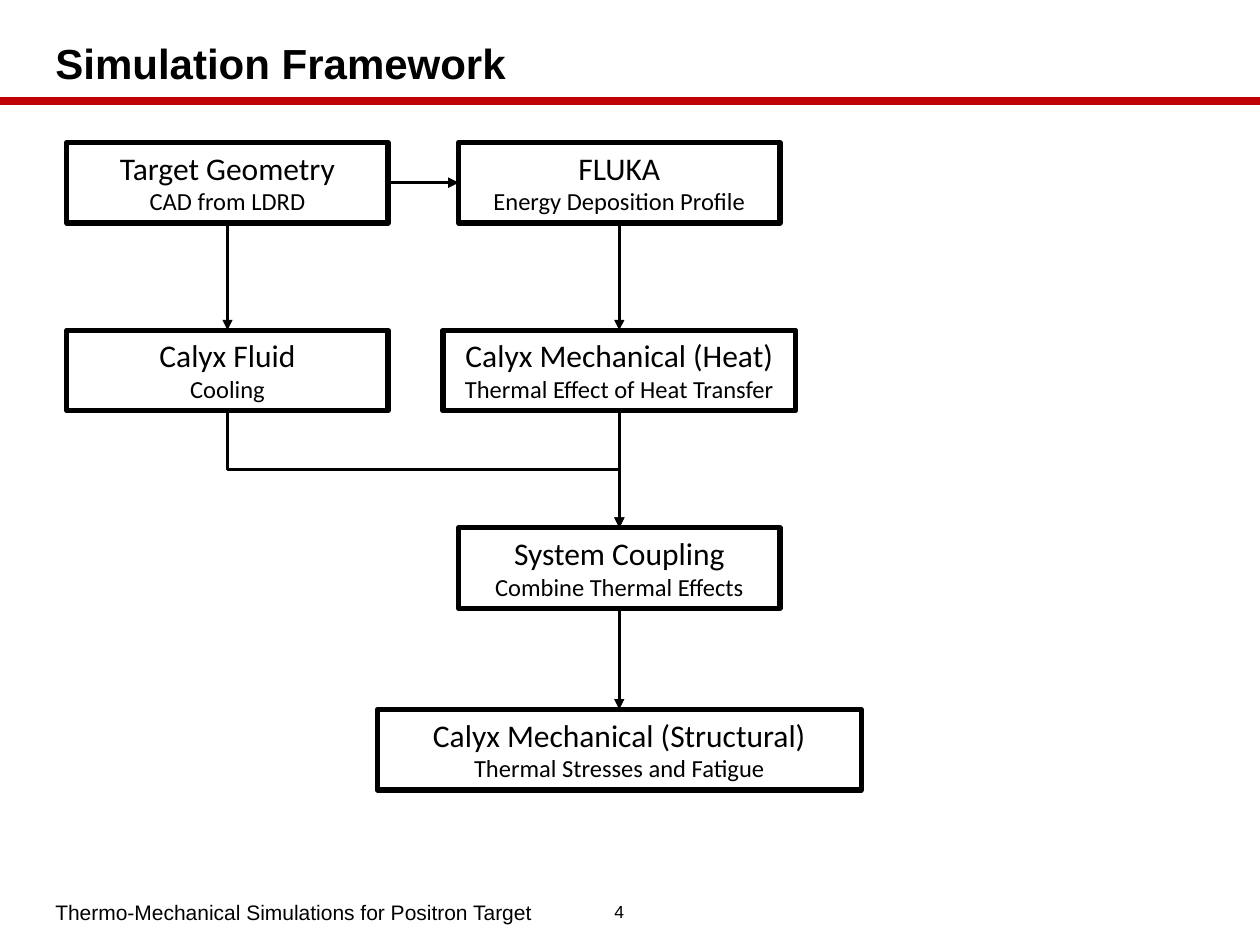
from lxml.etree import SubElement
from pptx import Presentation
from pptx.dml.color import RGBColor
from pptx.enum.shapes import MSO_CONNECTOR as Connector, MSO_SHAPE as Shape
from pptx.enum.text import MSO_ANCHOR as Anchor, MSO_AUTO_SIZE as AutoSize, PP_ALIGN as Align
from pptx.oxml.ns import qn
from pptx.util import Pt

COLORS = {"text": "000000", "rule": "C00000"}
BOX_HEIGHT = 46
TOP, LEFT, BOTTOM, RIGHT = range(4)  # connection sites of a rectangle

# key: (column, row, width, heading, detail)
STEPS = {
    "geometry": (0, 0, 183.6, "Target Geometry", "CAD from LDRD"),
    "deposition": (1, 0, 183.6, "FLUKA", "Energy Deposition Profile"),
    "cooling": (0, 1, 183.6, "Calyx Fluid", "Cooling"),
    "heat": (1, 1, 201.6, "Calyx Mechanical (Heat)", "Thermal Effect of Heat Transfer"),
    "coupling": (1, 2, 183.6, "System Coupling", "Combine Thermal Effects"),
    "structural": (1, 3, 276.5, "Calyx Mechanical (Structural)", "Thermal Stresses and Fatigue"),
}
STRAIGHT_LINKS = [
    ("geometry", RIGHT, "deposition", LEFT),
    ("geometry", BOTTOM, "cooling", TOP),
    ("deposition", BOTTOM, "heat", TOP),
    ("heat", BOTTOM, "coupling", TOP),
    ("coupling", BOTTOM, "structural", TOP),
]
COLUMN_CENTERS = (91.8, 315.7)
ROW_TOPS = (0, 107.3, 220.2, 324)


def rgb(name):
    return RGBColor.from_string(COLORS[name])


def write(paragraph, text, size, font="Arial", bold=False, align=Align.LEFT):
    paragraph.alignment = align
    run = paragraph.add_run()
    run.text = text
    run.font.name = font
    run.font.size = Pt(size)
    run.font.bold = bold
    run.font.color.rgb = rgb("text")


def style_line(connector, color, width):
    connector.line.color.rgb = rgb(color)
    connector.line.width = Pt(width)
    SubElement(connector._element.spPr, qn("a:effectLst"))


def add_header(slide, left, top, width, height):
    title = slide.shapes.title
    title.left, title.top, title.width, title.height = map(Pt, (left, top, width, height))
    title.text_frame.vertical_anchor = Anchor.MIDDLE
    heading = title.text_frame.paragraphs[0]
    heading.line_spacing = 0.9
    write(heading, "Simulation Framework", 24, bold=True)
    rule_y = Pt(top + height + 0.8)
    rule = slide.shapes.add_connector(Connector.STRAIGHT, 0, rule_y, Pt(720), rule_y)
    style_line(rule, "rule", 4.5)


def add_footer(slide, left, top, width, height):
    number_width = 42.5
    talk_width = width - number_width
    cells = [
        (left, talk_width, "Thermo-Mechanical Simulations for Positron Target", 12, Align.LEFT),
        (left + talk_width, number_width, "4", 10, Align.CENTER),
    ]
    for x, cell_width, text, size, align in cells:
        frame = slide.shapes.add_textbox(Pt(x), Pt(top), Pt(cell_width), Pt(height)).text_frame
        frame.word_wrap = True
        frame.vertical_anchor = Anchor.MIDDLE
        write(frame.paragraphs[0], text, size, align=align)


def add_step(slide, center, top, width, heading, detail):
    step = slide.shapes.add_shape(
        Shape.RECTANGLE, Pt(center - width / 2), Pt(top), Pt(width), Pt(BOX_HEIGHT))
    step.shadow.inherit = False
    step.fill.background()
    step.line.color.rgb = rgb("text")
    step.line.width = Pt(3)
    frame = step.text_frame
    frame.word_wrap = True
    frame.auto_size = AutoSize.SHAPE_TO_FIT_TEXT
    frame.vertical_anchor = Anchor.TOP
    write(frame.paragraphs[0], heading, 18, "Calibri", align=Align.CENTER)
    write(frame.add_paragraph(), detail, 14, "Calibri", align=Align.CENTER)
    return step


def link(slide, source, source_site, target, target_site, kind=Connector.STRAIGHT):
    arrow = slide.shapes.add_connector(kind, 0, 0, 0, 0)
    arrow.begin_connect(source, source_site)
    arrow.end_connect(target, target_site)
    style_line(arrow, "text", 1.5)
    SubElement(arrow.line._get_or_add_ln(), qn("a:tailEnd"), type="triangle")
    return arrow


def turn_downward(elbow):
    """Rotate an elbow so that it leaves and arrives vertically."""
    across, down = elbow.width, elbow.height
    elbow.left += (across - down) // 2
    elbow.top += (down - across) // 2
    elbow.width, elbow.height = down, across
    xfrm = elbow._element.spPr.find(qn("a:xfrm"))
    xfrm.set("rot", str(270 * 60000))
    xfrm.set("flipH", "1")


def add_flowchart(slide, left, top):
    steps = {
        key: add_step(slide, left + COLUMN_CENTERS[column], top + ROW_TOPS[row], *content)
        for key, (column, row, *content) in STEPS.items()
    }
    for source, source_site, target, target_site in STRAIGHT_LINKS:
        link(slide, steps[source], source_site, steps[target], target_site)
    turn_downward(link(slide, steps["cooling"], BOTTOM, steps["coupling"], TOP, Connector.ELBOW))


def main():
    deck = Presentation()
    deck.slide_width, deck.slide_height = Pt(720), Pt(540)
    slide = deck.slides.add_slide(deck.slide_layouts[5])
    add_header(slide, 24.5, 18.7, 666.7, 38.2)
    add_flowchart(slide, 38.2, 81.4)
    add_footer(slide, 24.5, 509, 350.6, 24.2)
    deck.save("out.pptx")


if __name__ == "__main__":
    main()
